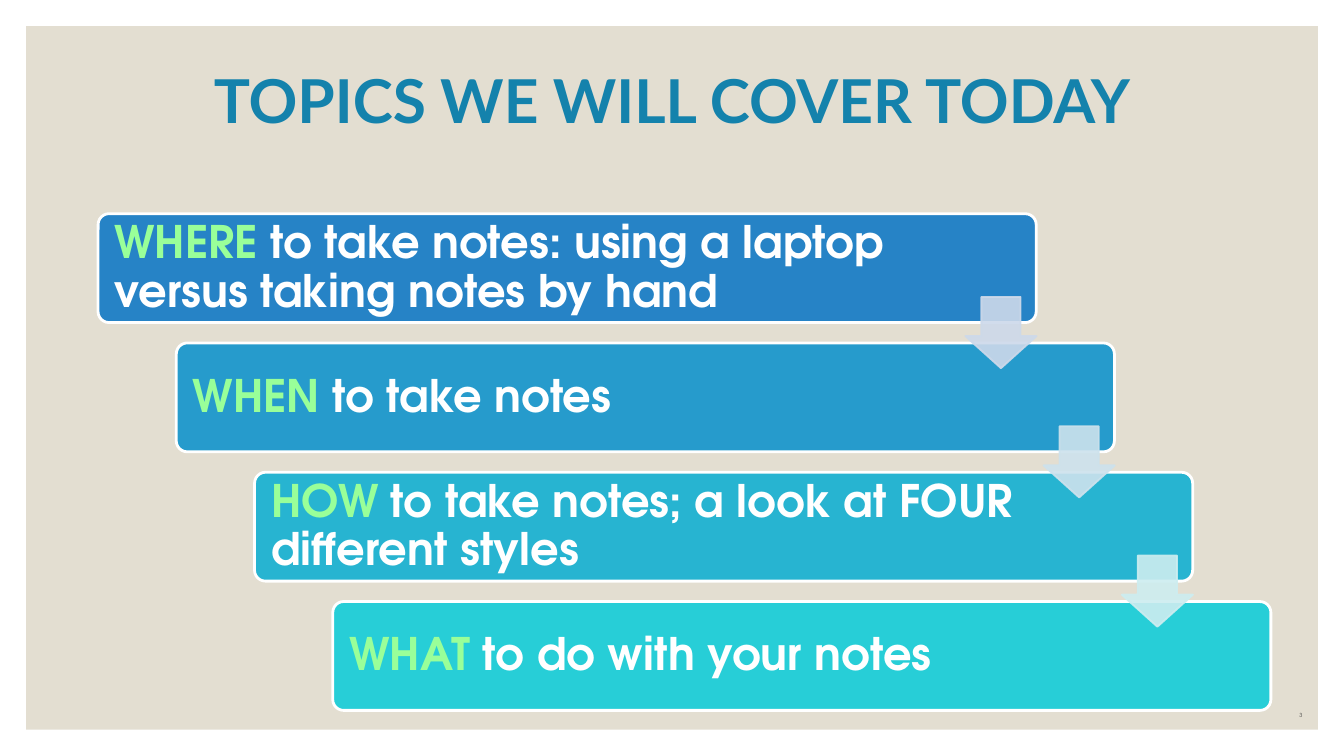
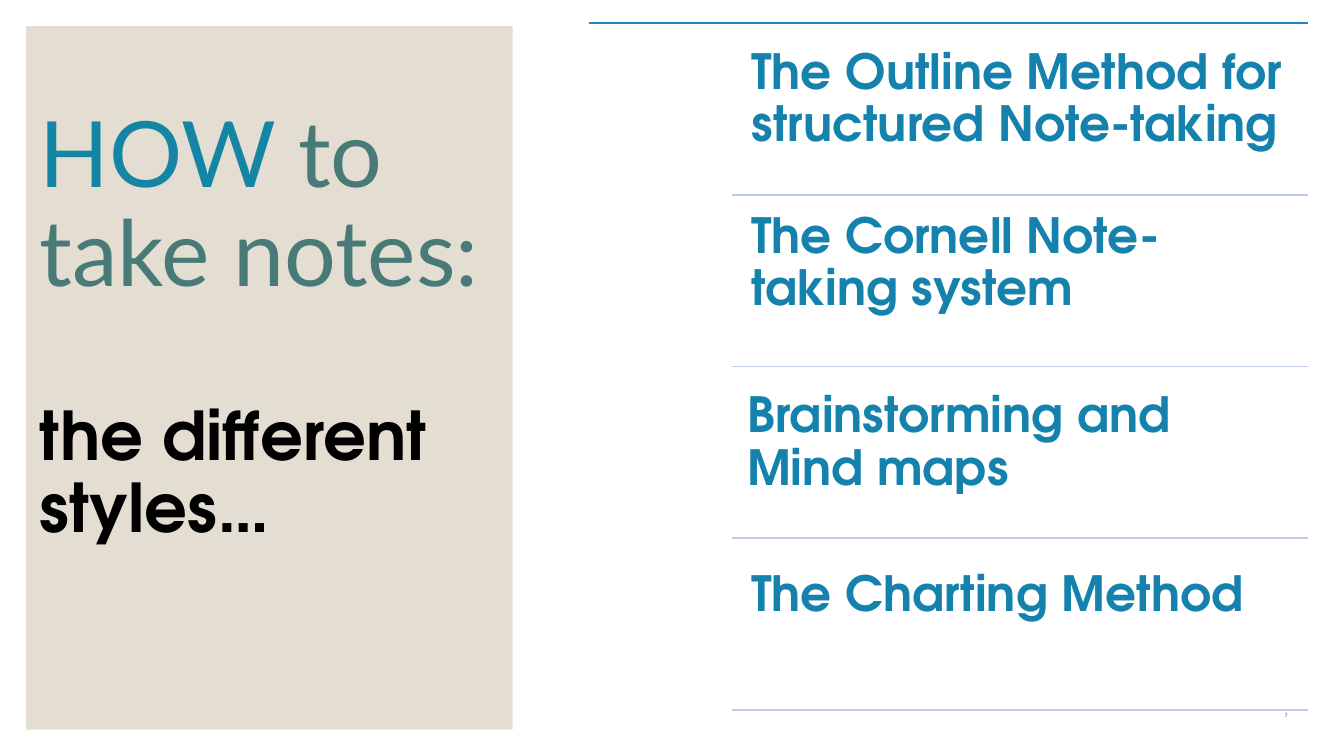
from lxml import etree
from pptx import Presentation
from pptx.dml.color import RGBColor as RGB
from pptx.enum.shapes import MSO_CONNECTOR as LINK, MSO_SHAPE as SHAPE
from pptx.enum.text import MSO_ANCHOR as ANCHOR, MSO_AUTO_SIZE as FIT, PP_ALIGN as ALIGN
from pptx.oxml.ns import qn
from pptx.util import Inches, Pt

HUES = {
    "panel": "E3DED1", "white": "FFFFFF", "black": "000000", "page": "404040",
    "blue": "1482AC", "teal": "1485A4", "sage": "487B78", "key": "99FF99",
    "top": "2683C6", "rule": "BECDE5",
}
LATO, BODY = "Lato", "TeX Gyre Adventor"
UNIT = Inches(0.1)  # the slide is a grid of 100 columns by 56.25 rows
COLS, ROWS = 100, 56.25
EDGE, HEAD, DEEP = 1.94, 1.95, 52.35  # panel margin, top and height


def grid(*cells):
    return [round(cell * UNIT) for cell in cells]


def write(frame, runs, form, **look):
    """Fill the last paragraph with (text, format) runs that share one base format."""
    frame.word_wrap, frame.auto_size = True, FIT.NONE
    para = frame.paragraphs[-1]
    for name, value in {"line_spacing": 0.9, **look}.items():
        setattr(para, name, value)
    for text, extra in runs:
        run = para.add_run()
        run.text = text
        for name, value in {**form, **extra}.items():
            if name == "hue":
                run.font.color.rgb = RGB.from_string(HUES[value])
            else:
                setattr(run.font, name, value)


prs = Presentation()
prs.slide_width, prs.slide_height = grid(COLS, ROWS)

# What both slides share: panel, title and page number
pages = [
    {"wide": COLS - 2 * EDGE, "title": (8.75, 2.3, 82.5, 11.2), "foot": 0.08,
     "num": "3", "num_at": (85.9, 51.7, 12, 2.3)},
    {"wide": 36.2, "title": (EDGE, 4.6, 36.2, 46.8), "foot": 0.77,
     "num": "7", "num_at": (90, 51.7, 6.8, 2.3)},
]
slides, heads = [], []
for page in pages:
    slide = prs.slides.add_slide(prs.slide_layouts[5])
    title = slide.shapes.title
    title.left, title.top, title.width, title.height = grid(*page["title"])
    head = title.text_frame
    head.vertical_anchor = ANCHOR.MIDDLE
    head.margin_bottom = Inches(page["foot"])

    panel = slide.shapes.add_shape(SHAPE.RECTANGLE, *grid(EDGE, HEAD, page["wide"], DEEP))
    panel.shadow.inherit = False
    panel.fill.solid()
    panel.fill.fore_color.rgb = RGB.from_string(HUES["panel"])
    panel.line.fill.background()
    title._element.addprevious(panel._element)

    num = slide.shapes.add_textbox(*grid(*page["num_at"])).text_frame
    num.vertical_anchor = ANCHOR.BOTTOM
    write(num, [(page["num"], {})], {"name": BODY, "size": Pt(3), "hue": "page"},
          line_spacing=0.8, alignment=ALIGN.RIGHT, space_after=Pt(6))
    slides.append(slide)
    heads.append(head)

# Slide 1: stair of topics joined by arrows
write(heads[0], [("TOPICS WE WILL COVER TODAY", {})],
      {"name": LATO, "size": Pt(32.4), "bold": True, "hue": "blue"}, alignment=ALIGN.CENTER)

topics = [
    ("WHERE", " to take notes: using a laptop versus taking notes by hand", "2683C6", 60.4),
    ("WHEN", " to take notes", "269BCC", 58.2),
    ("HOW", " to take notes; a look at FOUR different styles", "27B4D1", 58.2),
    ("WHAT", " to do with your notes", "27CED7", 58.2),
]
arrows = ["CDD9EA", "CDE2ED", "CDEDF0"]
STEP, DROP = 5.82, 9.62
topic = {"name": BODY, "size": Pt(24), "bold": True, "hue": "white"}
shapes = slides[0].shapes

for i, (key, rest, hue, wide) in enumerate(topics):
    left, top = 7.3 + i * STEP, 15.9 + i * DROP
    bar = shapes.add_shape(SHAPE.ROUNDED_RECTANGLE, *grid(left, top, 69.8, 8.1))
    bar.shadow.inherit = False
    bar.adjustments[0] = 0.1
    bar.fill.solid()
    bar.fill.fore_color.rgb = RGB.from_string(hue)
    bar.line.color.rgb = RGB.from_string(HUES["white"])
    bar.line.width = Pt(1.5)

    label = shapes.add_textbox(*grid(left + 0.25, top + 0.23, wide, 7.7)).text_frame
    label.vertical_anchor = ANCHOR.MIDDLE
    for side in ("left", "top", "right", "bottom"):
        setattr(label, f"margin_{side}", Inches(0.1))
    write(label, [(key, {"hue": "key"}), (rest, {})], topic)

for i, hue in enumerate(arrows):
    arrow = shapes.add_shape(SHAPE.DOWN_ARROW,
                             *grid(71.83 + i * STEP, 22.1 + i * DROP, 5.3, 5.3))
    arrow.shadow.inherit = False
    arrow.adjustments[0], arrow.adjustments[1] = 0.55, 0.45
    arrow.fill.solid()
    arrow.fill.fore_color.rgb = RGB.from_string(hue)
    arrow.line.color.rgb = RGB.from_string(hue)
    arrow.line.width = Pt(1)
    for tint in arrow._element.spPr.iter(qn("a:srgbClr")):
        etree.SubElement(tint, qn("a:alpha"), val="90000")

# Slide 2: ruled list of methods beside the title panel
write(heads[1], [("HOW ", {"hue": "teal"}), ("to take notes:", {})],
      {"name": LATO, "size": Pt(49), "hue": "sage"}, alignment=ALIGN.LEFT)
heads[1].add_paragraph()
write(heads[1], [("the different styles…", {})],
      {"name": BODY, "size": Pt(36), "bold": True, "hue": "black"},
      alignment=ALIGN.LEFT, space_before=Pt(51.5))

methods = [
    ("The Outline Method for structured Note-taking", 54.8, 2.43),
    ("The Cornell Note-taking system", 54.8, 14.65),
    ("Brainstorming and Mind maps", 54.5, 28),
    ("The Charting Method", 54.8, 41.3),
]
shapes = slides[1].shapes
for text, left, top in methods:
    item = shapes.add_textbox(*grid(left, top, 41.9, 12.2)).text_frame
    for side in ("left", "top", "right", "bottom"):
        setattr(item, f"margin_{side}", Inches(0.11))
    write(item, [(text, {})], {"name": BODY, "size": Pt(26), "bold": True, "hue": "blue"})

rules = [(43.8, 1.7, "top")]
rules += [(54.5, 14.5 + i * 12.77, "rule") for i in range(len(methods))]
for left, top, hue in rules:
    rule = shapes.add_connector(LINK.STRAIGHT, *grid(left, top, 97.3, top))
    rule.line.color.rgb = RGB.from_string(HUES[hue])
    rule.line.width = Pt(1)
    etree.SubElement(rule._element.spPr, qn("a:effectLst"))

prs.save("out.pptx")
